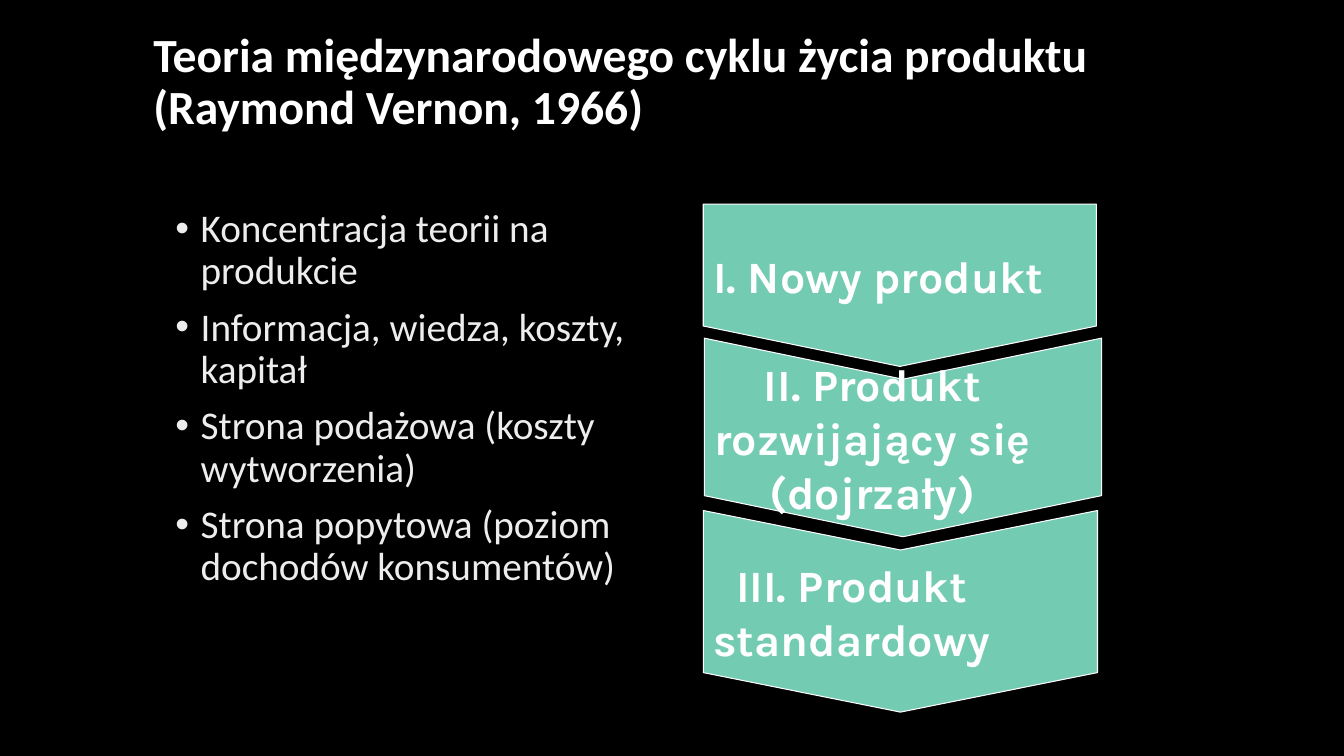
from pptx import Presentation
from pptx.dml.color import RGBColor
from pptx.enum.shapes import MSO_SHAPE as Shape
from pptx.enum.text import MSO_ANCHOR as Anchor, MSO_AUTO_SIZE as AutoSize, PP_ALIGN as Align
from pptx.oxml.ns import qn
from pptx.util import Inches, Pt
from lxml.etree import SubElement

TITLE = "Teoria międzynarodowego cyklu życia produktu (Raymond Vernon, 1966)"
POINTS = [
    "Koncentracja teorii na produkcie",
    "Informacja, wiedza, koszty, kapitał",
    "Strona podażowa (koszty wytworzenia)",
    "Strona popytowa (poziom dochodów konsumentów)",
]
STAGES = [
    (Shape.PENTAGON, (8.12, 0.88, 1.61, 3.9), 0.249, ["I. Nowy produkt "]),
    (Shape.CHEVRON, (7.97, 2.37, 1.97, 3.94), 0.207,
     ["II. Produkt ", "rozwijający się ", "(dojrzały) "]),
    (Shape.CHEVRON, (7.93, 4.11, 2, 3.91), 0.196, ["III. Produkt ", "standardowy "]),
]


def color(value):
    return RGBColor.from_string(value)


def place(box, area):
    box.left, box.top, box.width, box.height = map(Inches, area)


def add_span(para, text, size, font, tint, bold=False):
    span = para.add_run()
    span.text = text
    span.font.size = Pt(size)
    span.font.name = font
    span.font.bold = bold
    span.font.color.rgb = color(tint)


def paragraphs(frame, texts):
    for index, text in enumerate(texts):
        yield (frame.add_paragraph() if index else frame.paragraphs[0]), text


def fill_title(box):
    place(box, (1.42, 0.2, 11.24, 1.25))
    frame = box.text_frame
    frame.auto_size = AutoSize.NONE
    frame.vertical_anchor = Anchor.MIDDLE
    para = frame.paragraphs[0]
    para.alignment = Align.LEFT
    para.line_spacing = 0.9
    add_span(para, TITLE, 34, "Calibri", "FFFFFF", bold=True)


def fill_points(box):
    place(box, (1.64, 2.02, 4.69, 4.25))
    frame = box.text_frame
    frame.auto_size = AutoSize.NONE
    for index, (para, text) in enumerate(paragraphs(frame, POINTS)):
        props = para._p.get_or_add_pPr()
        props.set("marL", str(Inches(0.25)))
        props.set("indent", str(-Inches(0.25)))
        SubElement(props, qn("a:buFont")).set("typeface", "Arial")
        SubElement(props, qn("a:buChar")).set("char", "•")
        para.line_spacing = 0.9
        para.space_before = Pt(10 if index else 0)
        add_span(para, text, 28, "Calibri", "EDEDED")


def add_stage(page, kind, area, point, lines):
    stage = page.shapes.add_shape(kind, *map(Inches, area))
    stage.rotation = 90
    stage.adjustments[0] = point
    stage.shadow.inherit = False
    stage.fill.solid()
    stage.fill.fore_color.rgb = color("73CBB2")
    stage.line.color.rgb = color("FFFFFF")
    stage.line.width = Pt(0.75)
    frame = stage.text_frame
    frame.word_wrap = False
    frame.vertical_anchor = Anchor.MIDDLE
    body = frame._txBody.bodyPr
    body.set("rot", str(180 * 60000))
    body.set("vert", "eaVert")
    for para, text in paragraphs(frame, lines):
        para.alignment = Align.CENTER
        add_span(para, text, 32, "Karla", "FFFFFF", bold=True)


def main():
    deck = Presentation()
    deck.slide_width, deck.slide_height = Inches(13.33), Inches(7.5)
    page = deck.slides.add_slide(deck.slide_layouts[1])
    page.background.fill.solid()
    page.background.fill.fore_color.rgb = color("000000")
    fill_title(page.shapes.title)
    fill_points(page.placeholders[1])
    for stage in STAGES:
        add_stage(page, *stage)
    deck.save("out.pptx")


if __name__ == "__main__":
    main()
